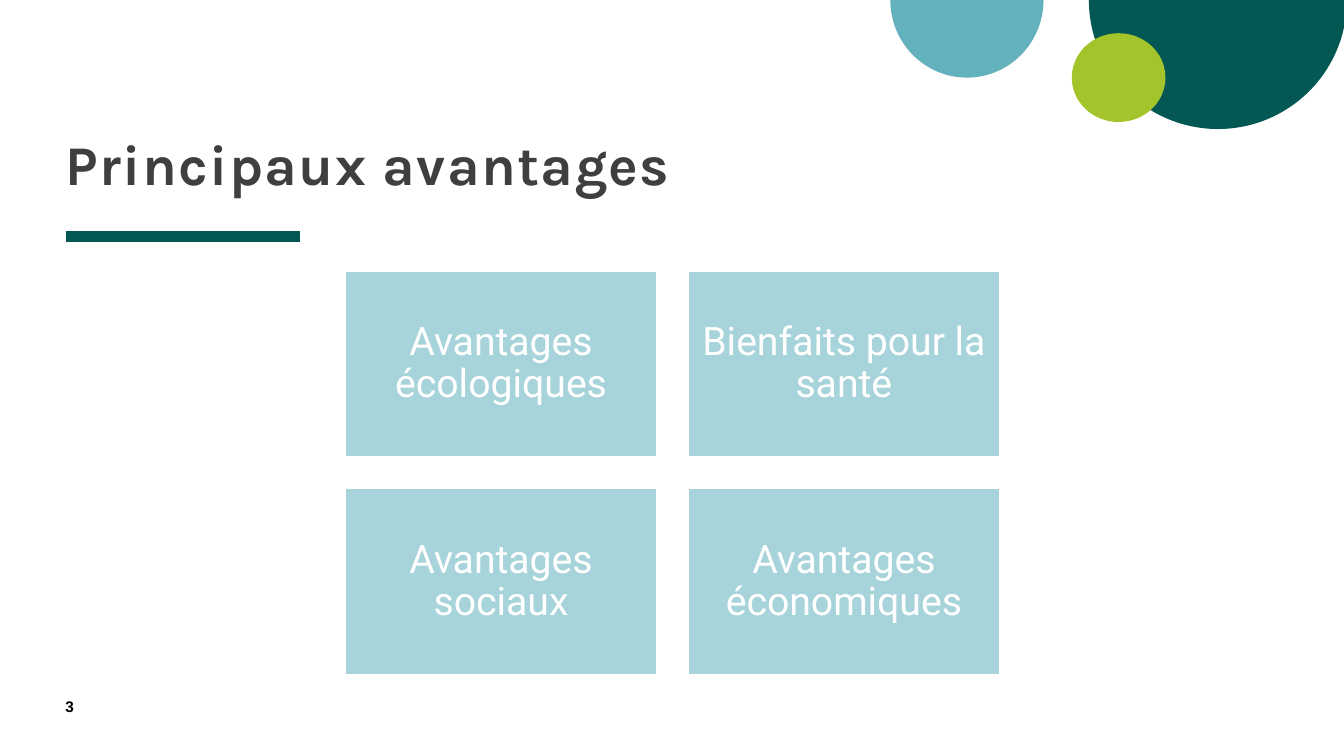
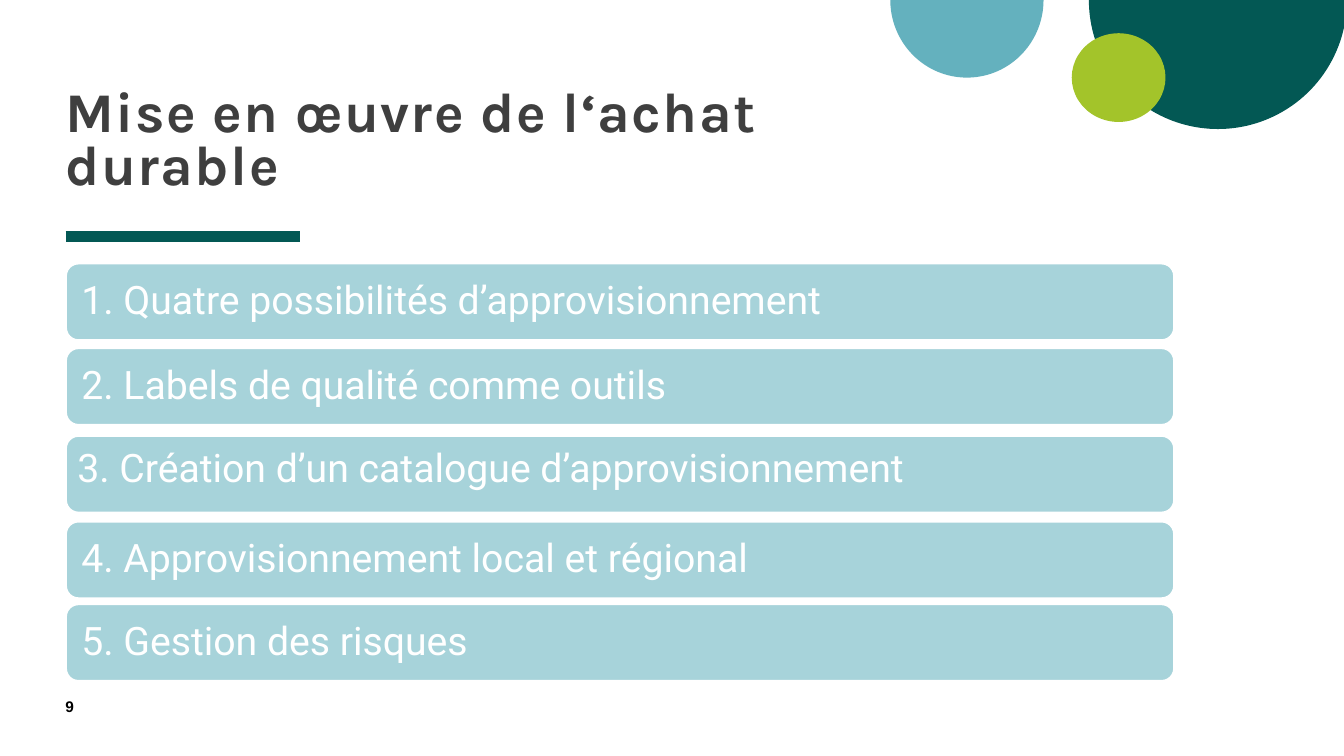
from dataclasses import dataclass

from pptx import Presentation
from pptx.dml.color import RGBColor
from pptx.enum import shapes, text
from pptx.oxml import xmlchemy
from pptx.util import Inches, Pt
from lxml import etree


@dataclass(frozen=True)
class Theme:
    dark_green: str = "035854"
    lime: str = "A3C42A"
    teal: str = "64B1BE"
    pale_teal: str = "A7D3DA"
    white: str = "FFFFFF"
    black: str = "000000"
    title_grey: str = "3F3F3F"
    title_font: str = "Karla"
    body_font: str = "Roboto"
    number_font: str = "Arial"
    title_size: int = 40
    body_size: int = 28
    number_size: int = 11
    title_tracking: int = 100
    left: float = 0.65
    margin: float = 0.12


THEME = Theme()
PANEL_MARGINS = (THEME.margin,) * 4

BENEFITS = [
    "Avantages écologiques",
    "Bienfaits pour la santé",
    "Avantages sociaux",
    "Avantages économiques",
]

STEPS = [
    (2.61, "1. Quatre possibilités d’approvisionnement", PANEL_MARGINS),
    (3.45, "2. Labels de qualité comme outils", PANEL_MARGINS),
    (4.32, "3. Création d’un catalogue d’approvisionnement", (0.08, 0.12, 0.12, 0.2)),
    (5.17, "4. Approvisionnement local et régional", PANEL_MARGINS),
    (5.99, "5. Gestion des risques", PANEL_MARGINS),
]


def color(value):
    return RGBColor.from_string(value)


def add_filled_shape(slide, kind, box, fill, outline=None):
    shape = slide.shapes.add_shape(kind, *map(Inches, box))
    shape.shadow.inherit = False
    shape.fill.solid()
    shape.fill.fore_color.rgb = color(fill)
    if outline:
        shape.line.color.rgb = color(outline)
        shape.line.width = Pt(2)
    else:
        shape.line.fill.background()
    return shape


def write_text(shape, wording, font, size, ink, bold=False, spacing=None,
               align=text.PP_ALIGN.LEFT, anchor=text.MSO_ANCHOR.TOP,
               margins=(0, 0, 0, 0)):
    frame = shape.text_frame
    frame.word_wrap = True
    frame.vertical_anchor = anchor
    (frame.margin_left, frame.margin_top,
     frame.margin_right, frame.margin_bottom) = map(Inches, margins)
    paragraph = frame.paragraphs[0]
    paragraph.alignment = align
    paragraph.line_spacing = spacing
    run = paragraph.add_run()
    run.text = wording
    run.font.name = font
    run.font.size = Pt(size)
    run.font.bold = bold
    run.font.color.rgb = color(ink)
    return run


def add_half_disc(slide, box, fill):
    disc = add_filled_shape(slide, shapes.MSO_SHAPE.PIE, box, fill)
    disc.adjustments[0] = 0
    disc.adjustments[1] = 108


def add_title_rule(slide):
    rule = slide.shapes.add_connector(
        shapes.MSO_CONNECTOR.STRAIGHT,
        *map(Inches, (THEME.left, 2.35, 2.98, 2.35)))
    rule.line.color.rgb = color(THEME.dark_green)
    rule.line.width = Pt(8)
    etree.SubElement(rule.element.spPr, xmlchemy.qn("a:effectLst"))


def add_panel(slide, kind, box, wording, align, margins=PANEL_MARGINS):
    panel = add_filled_shape(slide, kind, box, THEME.pale_teal, THEME.white)
    write_text(panel, wording, THEME.body_font, THEME.body_size, THEME.white,
               spacing=0.9, align=align, anchor=text.MSO_ANCHOR.MIDDLE,
               margins=margins)


def add_base_slide(presentation, title, number):
    slide = presentation.slides.add_slide(presentation.slide_layouts[6])
    add_half_disc(slide, (10.8, -1.28, 2.56, 2.56), THEME.dark_green)
    add_title_rule(slide)
    add_half_disc(slide, (8.83, -0.77, 1.52, 1.54), THEME.teal)
    add_filled_shape(slide, shapes.MSO_SHAPE.OVAL,
                     (10.63, 0.33, 0.93, 0.88), THEME.lime)
    title_box = slide.shapes.add_textbox(
        *map(Inches, (THEME.left, 0.21, 7.42, 1.74)))
    title_run = write_text(title_box, title, THEME.title_font, THEME.title_size,
                           THEME.title_grey, bold=True, spacing=0.8,
                           anchor=text.MSO_ANCHOR.BOTTOM)
    title_run.font._element.set("spc", str(THEME.title_tracking))
    number_box = slide.shapes.add_textbox(
        *map(Inches, (THEME.left, 6.92, 0.57, 0.27)))
    write_text(number_box, str(number), THEME.number_font, THEME.number_size,
               THEME.black, bold=True)
    return slide


def add_benefits_slide(presentation):
    slide = add_base_slide(presentation, "Principaux avantages", 3)
    width, height, gap = 3.07, 1.83, 0.33
    width, height, gap = 3.1, 1.86, 0.3
    for index, wording in enumerate(BENEFITS):
        row, column = divmod(index, 2)
        box = (3.42 + column * (width + gap), 2.68 + row * (height + gap),
               width, height)
        add_panel(slide, shapes.MSO_SHAPE.RECTANGLE, box, wording,
                  text.PP_ALIGN.CENTER)


def add_steps_slide(presentation):
    slide = add_base_slide(presentation, "Mise en œuvre de l‘achat durable", 9)
    for top, wording, margins in STEPS:
        add_panel(slide, shapes.MSO_SHAPE.ROUNDED_RECTANGLE,
                  (THEME.left, top, 11, 0.77), wording,
                  text.PP_ALIGN.LEFT, margins)


def main():
    presentation = Presentation()
    presentation.slide_width = Inches(13.33)
    presentation.slide_height = Inches(7.5)
    add_benefits_slide(presentation)
    add_steps_slide(presentation)
    presentation.save("out.pptx")


if __name__ == "__main__":
    main()
